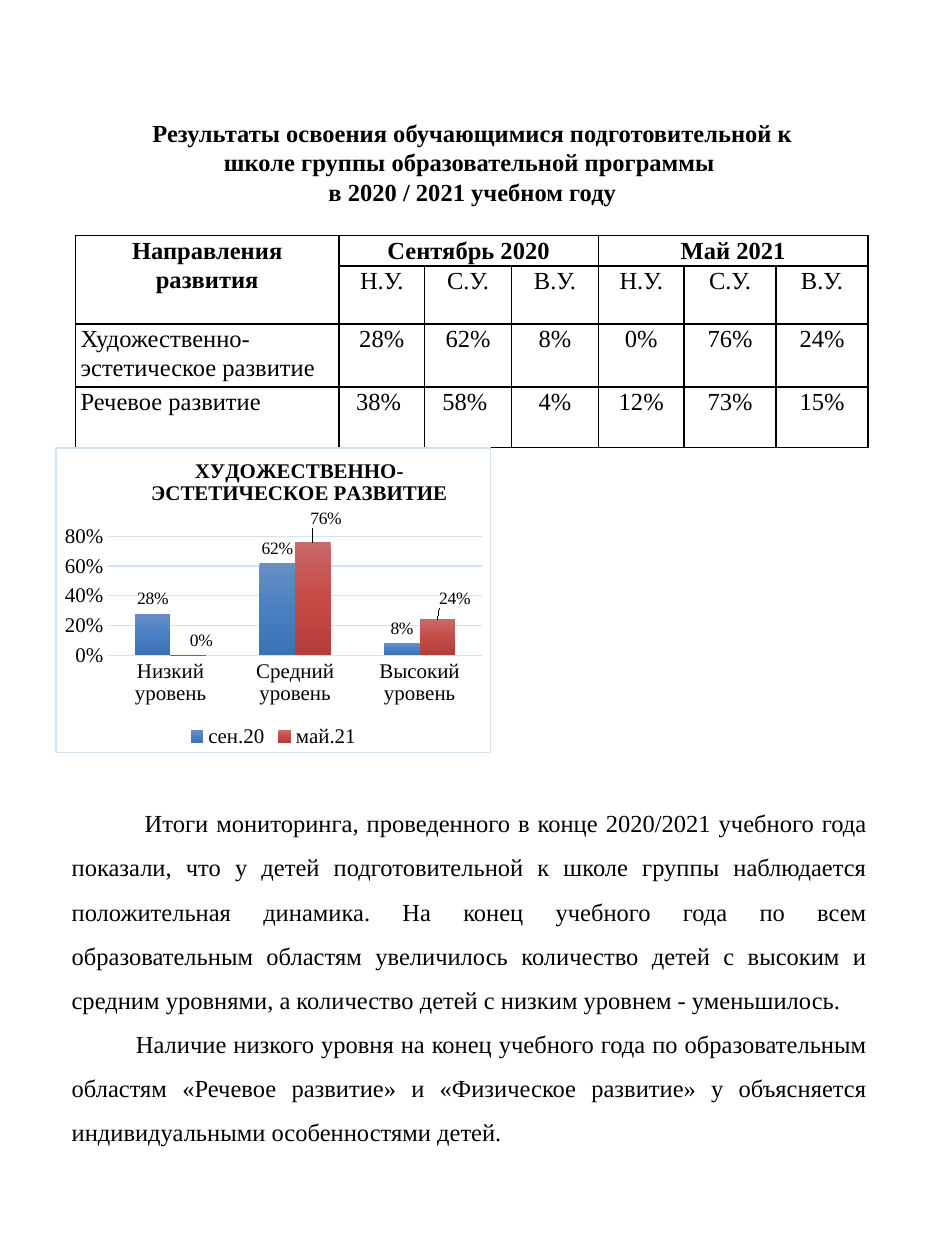
"""Build the slide with monitoring results: heading, table, column chart and summary."""
from pptx import Presentation
from pptx.chart.data import CategoryChartData
from pptx.dml.color import RGBColor
from pptx.enum.chart import XL_CHART_TYPE as ChartType, XL_LABEL_POSITION as LabelPosition
from pptx.enum.chart import XL_LEGEND_POSITION as LegendPosition, XL_TICK_MARK as TickMark
from pptx.enum.text import MSO_ANCHOR as Anchor, PP_ALIGN as Align
from pptx.oxml import parse_xml
from pptx.oxml.ns import nsdecls, qn
from pptx.util import Inches, Pt

FONT = "Times New Roman"
COLORS = {"text": "000000", "white": "FFFFFF", "grid": "D4E3F4"}
GRADIENTS = [("688FC5", "4A80C3", "3B72B3"), ("C76967", "C64B47", "B63C39")]


def add_text(paragraph, text, align, bold=False, spacing=None):
    paragraph.alignment = align
    paragraph.line_spacing = spacing
    run = paragraph.add_run()
    run.text = text
    run.font.name = FONT
    run.font.size = Pt(14)
    run.font.bold = bold
    run.font.color.rgb = RGBColor.from_string(COLORS["text"])


def manual_layout(tags):
    items = "".join(f'<c:{tag} val="{value}"/>' for tag, value in tags.items())
    return parse_xml(f'<c:layout {nsdecls("c")}><c:manualLayout>{items}</c:manualLayout></c:layout>')


presentation = Presentation()
presentation.slide_width = Inches(7.5)
presentation.slide_height = Inches(10)
slide = presentation.slides.add_slide(presentation.slide_layouts[6])

levels = ["Н.У.", "С.У.", "В.У."]
rows = [
    ["Направления развития", "Сентябрь 2020", "", "", "Май 2021", "", ""],
    [""] + levels * 2,
    ["Художественно- эстетическое развитие", "28%", "62%", "8%", "0%", "76%", "24%"],
    ["Речевое развитие", "38% ", "58% ", "4%", "12%", "73%", "15%"],
]
column_widths = [2.09, 0.68, 0.69, 0.69, 0.68, 0.73, 0.73]
row_heights = [0.24, 0.46, 0.5, 0.48]
table = slide.shapes.add_table(
    len(rows), len(column_widths), Inches(0.6), Inches(1.87), Inches(6.3), Inches(sum(row_heights))
).table
table.first_row = False
table.horz_banding = False
for column, width in zip(table.columns, column_widths):
    column.width = Inches(width)
for row, height in zip(table.rows, row_heights):
    row.height = Inches(height)
for row_index, texts in enumerate(rows):
    for column_index, text in enumerate(texts):
        cell = table.cell(row_index, column_index)
        cell.margin_left = cell.margin_right = Inches(0.04)
        cell.margin_top = cell.margin_bottom = 0
        properties = cell._tc.get_or_add_tcPr()
        for side in ("lnL", "lnR", "lnT", "lnB"):
            properties.append(parse_xml(
                f'<a:{side} {nsdecls("a")} w="12700"><a:solidFill>'
                f'<a:srgbClr val="{COLORS["text"]}"/></a:solidFill></a:{side}>'))
        cell.fill.background()
        if text:
            align = Align.LEFT if row_index > 1 and column_index == 0 else Align.CENTER
            add_text(cell.text_frame.paragraphs[0], text, align, row_index == 0, 1.07)
table.cell(0, 0).merge(table.cell(1, 0))
table.cell(0, 1).merge(table.cell(0, 3))
table.cell(0, 4).merge(table.cell(0, 6))

chart_data = CategoryChartData(number_format="0%")
chart_data.categories = ["Низкий уровень", "Средний уровень", "Высокий уровень"]
chart_data.add_series("сен.20", (0.28, 0.62, 0.08))
chart_data.add_series("май.21", (0, 0.76, 0.24))
chart = slide.shapes.add_chart(
    ChartType.COLUMN_CLUSTERED, Inches(0.44), Inches(3.55), Inches(3.46), Inches(2.43), chart_data
).chart
chart.font.name = FONT
chart.font.size = Pt(12)
chart.font.color.rgb = RGBColor.from_string(COLORS["text"])
chart._chartSpace.chart.addnext(parse_xml(
    f'<c:spPr {nsdecls("c", "a")}><a:solidFill><a:srgbClr val="{COLORS["white"]}"/></a:solidFill>'
    f'<a:ln w="9525"><a:solidFill><a:srgbClr val="{COLORS["grid"]}"/></a:solidFill></a:ln></c:spPr>'))

title_frame = chart.chart_title.text_frame
add_text(title_frame.paragraphs[0], "ХУДОЖЕСТВЕННО-ЭСТЕТИЧЕСКОЕ РАЗВИТИЕ", Align.CENTER, True)
title_frame.paragraphs[0].runs[0].font.size = Pt(12)
title = chart.chart_title._element
for old_layout in title.findall(qn("c:layout")):
    title.remove(old_layout)
title.find(qn("c:tx")).addnext(
    manual_layout({"xMode": "edge", "yMode": "edge", "x": 0.21, "y": 0.02}))

chart.has_legend = True
chart.legend.position = LegendPosition.BOTTOM
chart.legend.include_in_layout = False
plot_area = chart._chartSpace.chart.plotArea
for old_layout in plot_area.findall(qn("c:layout")):
    plot_area.remove(old_layout)
plot_area.insert(0, manual_layout({
    "layoutTarget": "inner", "xMode": "edge", "yMode": "edge",
    "x": 0.12, "y": 0.29, "w": 0.86, "h": 0.39}))

value_axis = chart.value_axis
value_axis.minimum_scale = 0
value_axis.maximum_scale = 0.8
value_axis.major_unit = 0.2
value_axis.tick_labels.number_format = "0%"
value_axis.tick_labels.number_format_is_linked = False
value_axis.format.line.fill.background()
for axis in (value_axis, chart.category_axis):
    axis.major_tick_mark = axis.minor_tick_mark = TickMark.NONE
for line in (value_axis.major_gridlines.format.line, chart.category_axis.format.line):
    line.color.rgb = RGBColor.from_string(COLORS["grid"])
    line.width = Pt(0.75)

plot = chart.plots[0]
plot.gap_width = 150
plot.overlap = 0
plot.vary_by_categories = False
for series, gradient in zip(plot.series, GRADIENTS):
    series.format.fill.gradient()
    series.format.fill.gradient_angle = 270
    stops = series._element.find(".//" + qn("a:gsLst"))
    for stop in list(stops):
        stops.remove(stop)
    for index, color in enumerate(gradient):
        stops.append(parse_xml(
            f'<a:gs {nsdecls("a")} pos="{index * 50000}"><a:srgbClr val="{color}"/></a:gs>'))
    labels = series.data_labels
    labels.show_value = True
    labels.number_format = "0%"
    labels.number_format_is_linked = False
    labels.position = LabelPosition.OUTSIDE_END
    labels.font.size = Pt(10)
    labels.font.name = FONT

may_series = plot.series[1]
for index, (x, y) in enumerate([(0.03, 0), (0.03, -0.03), (0.04, -0.02)]):
    label = may_series.points[index].data_label
    label.font.size = Pt(10)
    label.font.name = FONT
    label.position = LabelPosition.OUTSIDE_END
    label_element = may_series._element.findall(".//" + qn("c:dLbl"))[index]
    label_element.find(qn("c:idx")).addnext(manual_layout({"x": x, "y": y}))

heading = slide.shapes.add_textbox(Inches(1.06), Inches(0.88), Inches(5.38), Inches(0.81)).text_frame
heading.word_wrap = True
heading.vertical_anchor = Anchor.MIDDLE
add_text(heading.paragraphs[0],
         "Результаты освоения обучающимися подготовительной к школе группы образовательной программы ",
         Align.CENTER, True)
add_text(heading.add_paragraph(), "в 2020 / 2021 учебном году", Align.CENTER, True)

summary = slide.shapes.add_textbox(Inches(0.47), Inches(6.25), Inches(6.51), Inches(2.93)).text_frame
summary.word_wrap = True
summary_texts = [
    (0.58, "Итоги мониторинга, проведенного в конце 2020/2021 учебного года показали, что у детей "
     "подготовительной к школе группы наблюдается положительная динамика. На конец учебного года "
     "по всем образовательным областям увеличилось количество детей с высоким и средним уровнями, "
     "а количество детей с низким уровнем - уменьшилось."),
    (0.51, "Наличие низкого уровня на конец учебного года по образовательным областям «Речевое "
     "развитие» и «Физическое развитие» у объясняется индивидуальными особенностями детей."),
]
for index, (indent, text) in enumerate(summary_texts):
    paragraph = summary.add_paragraph() if index else summary.paragraphs[0]
    add_text(paragraph, text, Align.JUSTIFY, spacing=1.5)
    paragraph._p.get_or_add_pPr().set("indent", str(Inches(indent)))

presentation.save("out.pptx")
